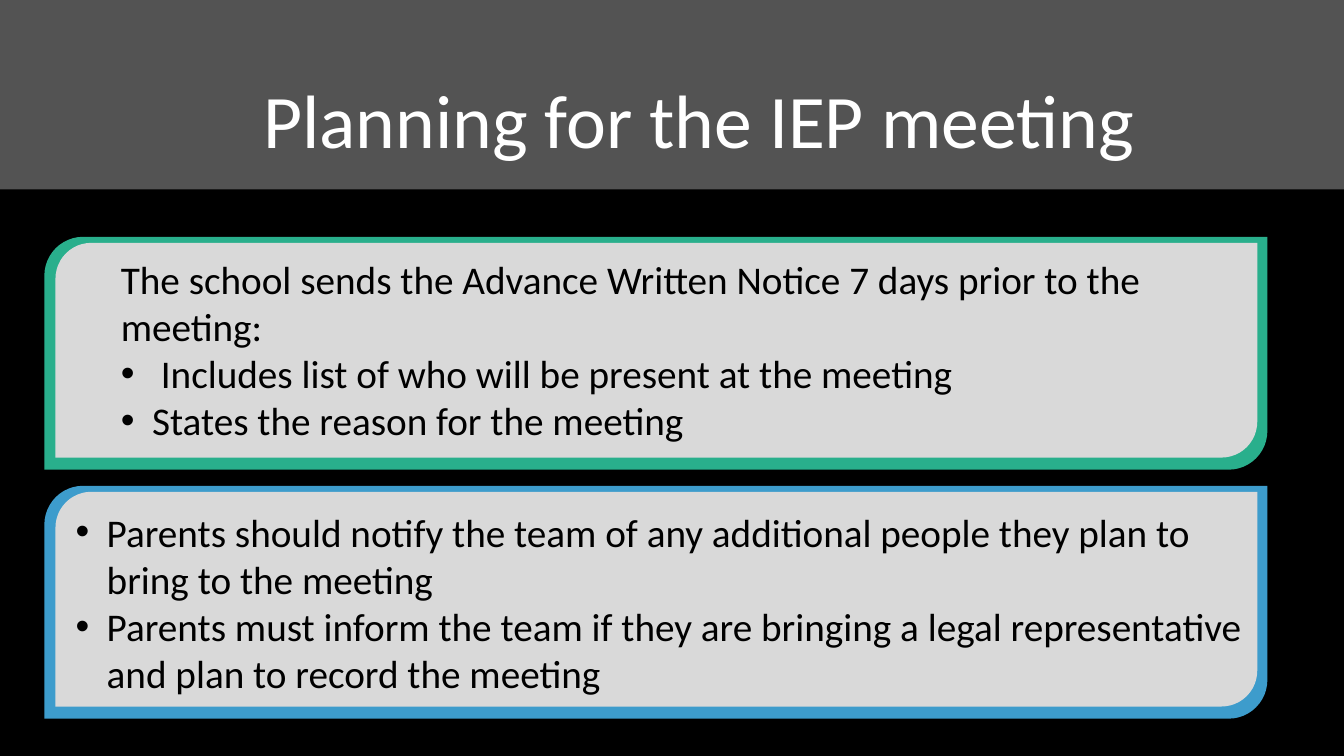
"""Build the slide on planning for the IEP meeting."""
from lxml.etree import SubElement
from pptx import Presentation
from pptx.dml.color import RGBColor
from pptx.enum.shapes import MSO_SHAPE as Kind
from pptx.enum.text import MSO_ANCHOR as Anchor, PP_ALIGN as Align
from pptx.oxml.ns import qn
from pptx.util import Inches, Pt

BLACK = RGBColor(0x00, 0x00, 0x00)
WHITE = RGBColor(0xFF, 0xFF, 0xFF)
GREEN = RGBColor(0x29, 0xAF, 0x8C)
BLUE = RGBColor(0x3D, 0x9C, 0xCC)
PALE = RGBColor(0xD9, 0xD9, 0xD9)
GRAY = RGBColor(0xA6, 0xA6, 0xA6)

deck = Presentation()
deck.slide_width, deck.slide_height = Inches(13.33), Inches(7.5)
COL, ROW = deck.slide_width / 100, deck.slide_height / 100
slide = deck.slides.add_slide(deck.slide_layouts[6])
back = slide.background.fill
back.solid()
back.fore_color.rgb = BLACK


def block(kind, x, y, w, h, color):
    shape = slide.shapes.add_shape(kind, *map(int, (x * COL, y * ROW, w * COL, h * ROW)))
    shape.shadow.inherit = False
    shape.fill.solid()
    shape.fill.fore_color.rgb = color
    shape.line.fill.background()
    return shape


def write(x, y, w, h, lines, wrap, align, style):
    box = slide.shapes.add_textbox(*map(int, (x * COL, y * ROW, w * COL, h * ROW)))
    frame = box.text_frame
    frame.word_wrap = wrap
    frame.vertical_anchor = Anchor.TOP
    for n, (mark, text) in enumerate(lines):
        para = frame.paragraphs[0] if n == 0 else frame.add_paragraph()
        para.alignment = align
        run = para.add_run()
        run.text = text
        run.font.color.rgb = style["color"]
        for key in ("name", "size"):
            setattr(run.font, key, style[key])
        if mark:
            props = para._p.get_or_add_pPr()
            props.set("marL", str(Inches(0.31)))
            props.set("indent", str(-Inches(0.31)))
            SubElement(props, qn("a:buFont")).set("typeface", "Arial")
            SubElement(props, qn("a:buChar")).set("char", mark)


head = {"name": "Calibri", "size": Pt(54), "color": WHITE}
body = {"name": "Calibri", "size": Pt(28), "color": BLACK}

band = block(Kind.RECTANGLE, 0, 0, 100, 25.07, GRAY)
tint = band.fill._xPr.find(qn("a:solidFill"))[0]
SubElement(tint, qn("a:alpha")).set("val", "50000")
write(18.45, 8.93, 67.07, 13.47, [("", "Planning for the IEP meeting")],
      False, Align.CENTER, head)

panels = [
    (GREEN, 8.25, 1.73, 79.37, [
        ("", "The school sends the Advance Written Notice 7 days prior to the meeting:"),
        ("•", " Includes list of who will be present at the meeting"),
        ("•", "States the reason for the meeting"),
    ]),
    (BLUE, 4.88, 2.27, 91, [
        ("•", "Parents should notify the team of any additional people "
              "they plan to bring to the meeting"),
        ("•", "Parents must inform the team if they are bringing a legal "
              "representative and plan to record the meeting"),
    ]),
]
for n, (color, left, drop, wide, lines) in enumerate(panels):
    top = 31.33 + n * 32.93
    block(Kind.ROUND_2_DIAG_RECTANGLE, 3.3, top, 91, 30.8, color)
    block(Kind.ROUND_2_DIAG_RECTANGLE, 4.13, top + 0.8, 89.42, 28.4, PALE)
    write(left, top + drop, wide, 26.53, lines, True, Align.LEFT, body)

deck.save("out.pptx")
